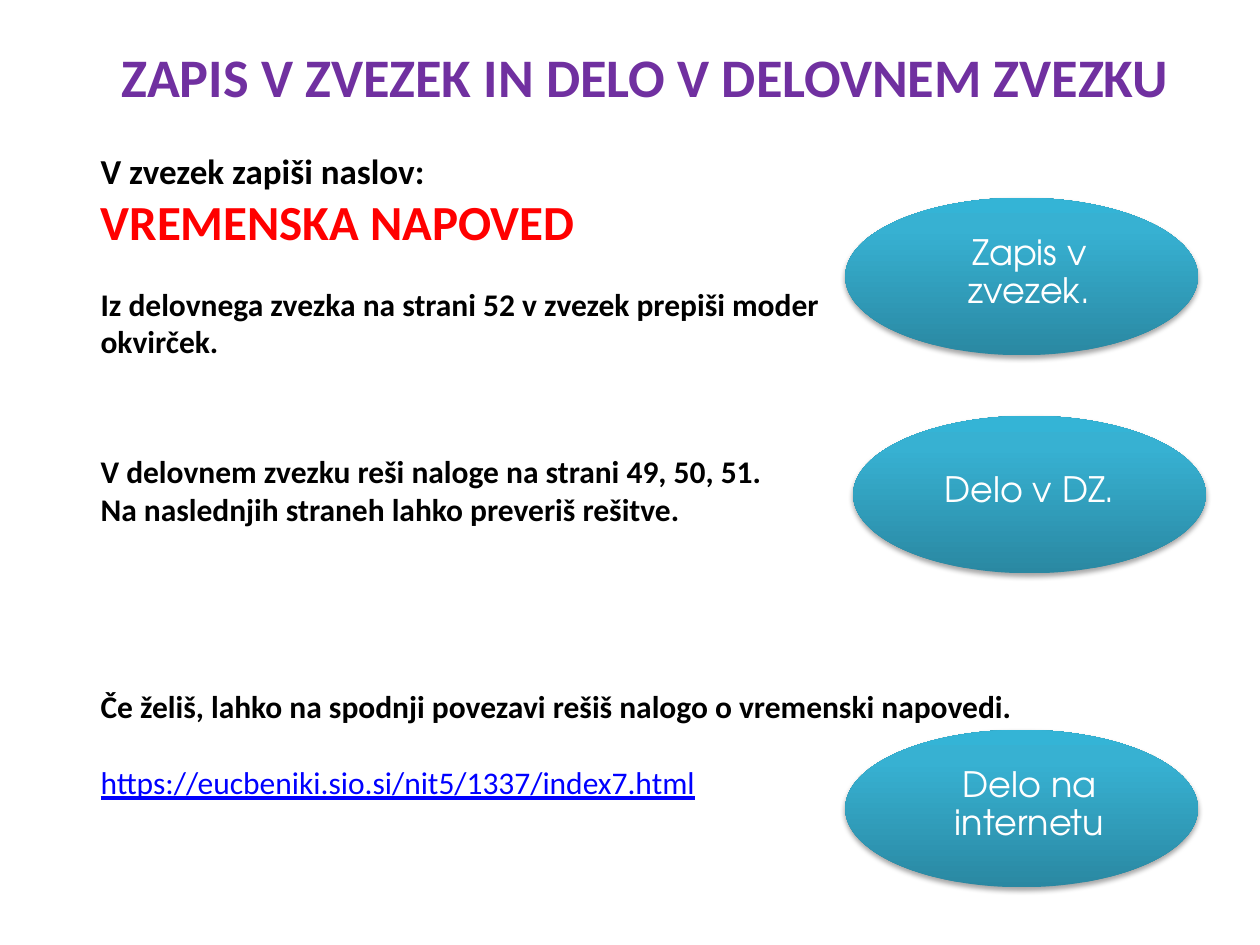
from copy import deepcopy
from pptx import Presentation
from pptx.dml.color import RGBColor
from pptx.enum.shapes import MSO_SHAPE
from pptx.enum.text import MSO_ANCHOR, PP_ALIGN
from pptx.oxml import parse_xml
from pptx.oxml.ns import nsdecls, qn
from pptx.util import Pt

PURPLE = RGBColor(0x70, 0x30, 0xA0)
RED = RGBColor(0xFF, 0x00, 0x00)
BLACK = RGBColor(0x00, 0x00, 0x00)
BLUE = RGBColor(0x00, 0x00, 0xFF)
WHITE = RGBColor(0xFF, 0xFF, 0xFF)
GRADIENT = [
    (0, RGBColor(0x2A, 0x88, 0xA2)),
    (0.8, RGBColor(0x37, 0xB1, 0xD2)),
    (1, RGBColor(0x34, 0xB4, 0xD6)),
]
SHADOW = (
    f'<a:outerShdw {nsdecls("a")} blurRad="{Pt(3.1)}" dist="{Pt(1.8)}" dir="5400000" rotWithShape="0">'
    '<a:srgbClr val="000000"><a:alpha val="35000"/></a:srgbClr></a:outerShdw>'
)


def style(paragraph, size, color, bold=True, font="Calibri"):
    for span in paragraph.runs:
        span.font.name = font
        span.font.size = Pt(size)
        span.font.bold = bold
        span.font.color.rgb = color


deck = Presentation()
deck.slide_width, deck.slide_height = Pt(720), Pt(540)
page = deck.slides.add_slide(deck.slide_layouts[5])

title = page.shapes.title
title.left, title.top, title.width, title.height = Pt(48), Pt(21), Pt(641), Pt(45)
title.text_frame.text = "ZAPIS V ZVEZEK IN DELO V DELOVNEM ZVEZKU"
title.text_frame.paragraphs[0].alignment = PP_ALIGN.CENTER
style(title.text_frame.paragraphs[0], 31, PURPLE)

instructions = [
    (82, 471, 128, [
        ("V zvezek zapiši naslov:", 20, BLACK, 0),
        ("VREMENSKA NAPOVED", 28, RED, 0),
        ("Iz delovnega zvezka na strani 52 v zvezek prepiši moder okvirček.", 18, BLACK, 19.5),
    ]),
    (255, 554, 73, [
        ("V delovnem zvezku reši naloge na strani 49, 50, 51.", 18, BLACK, 0),
        ("Na naslednjih straneh lahko preveriš rešitve.", 18, BLACK, 0),
    ]),
    (389, 546, 73, [
        ("Če želiš, lahko na spodnji povezavi rešiš nalogo o vremenski napovedi.", 18, BLACK, 0),
        ("https://eucbeniki.sio.si/nit5/1337/index7.html", 18, BLUE, 22),
    ]),
]
for top, width, height, lines in instructions:
    box = page.shapes.add_textbox(Pt(50.4), Pt(top), Pt(width), Pt(height))
    frame = box.text_frame
    frame.word_wrap = True
    frame.text = "\n".join(line[0] for line in lines)
    for paragraph, (text, size, color, gap) in zip(frame.paragraphs, lines):
        if gap:
            paragraph.space_before = Pt(gap)
        style(paragraph, size, color, bold=color != BLUE)
        if color == BLUE:
            paragraph.runs[0].font.underline = True

labels = [
    (483, 113, "Zapis v zvezek."),
    (483, 417, "Delo na internetu"),
    (487.5, 237.6, "Delo v DZ."),
]
for left, top, text in labels:
    ellipse = page.shapes.add_shape(MSO_SHAPE.OVAL, Pt(left), Pt(top), Pt(201.6), Pt(90))
    ellipse.line.fill.background()
    ellipse.fill.gradient()
    ellipse.fill.gradient_angle = 90
    stop_list = next(ellipse._element.spPr.iter(qn("a:gsLst")))
    stop_list.append(deepcopy(stop_list[-1]))
    for stop, (position, color) in zip(ellipse.fill.gradient_stops, GRADIENT):
        stop.position = position
        stop.color.rgb = color
    ellipse.shadow.inherit = False
    ellipse._element.spPr.find(qn("a:effectLst")).append(parse_xml(SHADOW))

    label = page.shapes.add_textbox(Pt(517), Pt(top + 11.3), Pt(142.6), Pt(63.4))
    frame = label.text_frame
    frame.word_wrap = True
    frame.vertical_anchor = MSO_ANCHOR.MIDDLE
    frame.margin_left = frame.margin_right = frame.margin_top = frame.margin_bottom = Pt(1.5)
    frame.text = text
    paragraph = frame.paragraphs[0]
    paragraph.alignment = PP_ALIGN.CENTER
    paragraph.line_spacing = 0.9
    paragraph.space_after = Pt(7)
    style(paragraph, 20, WHITE, bold=False, font="TeX Gyre Adventor")

deck.save("out.pptx")
